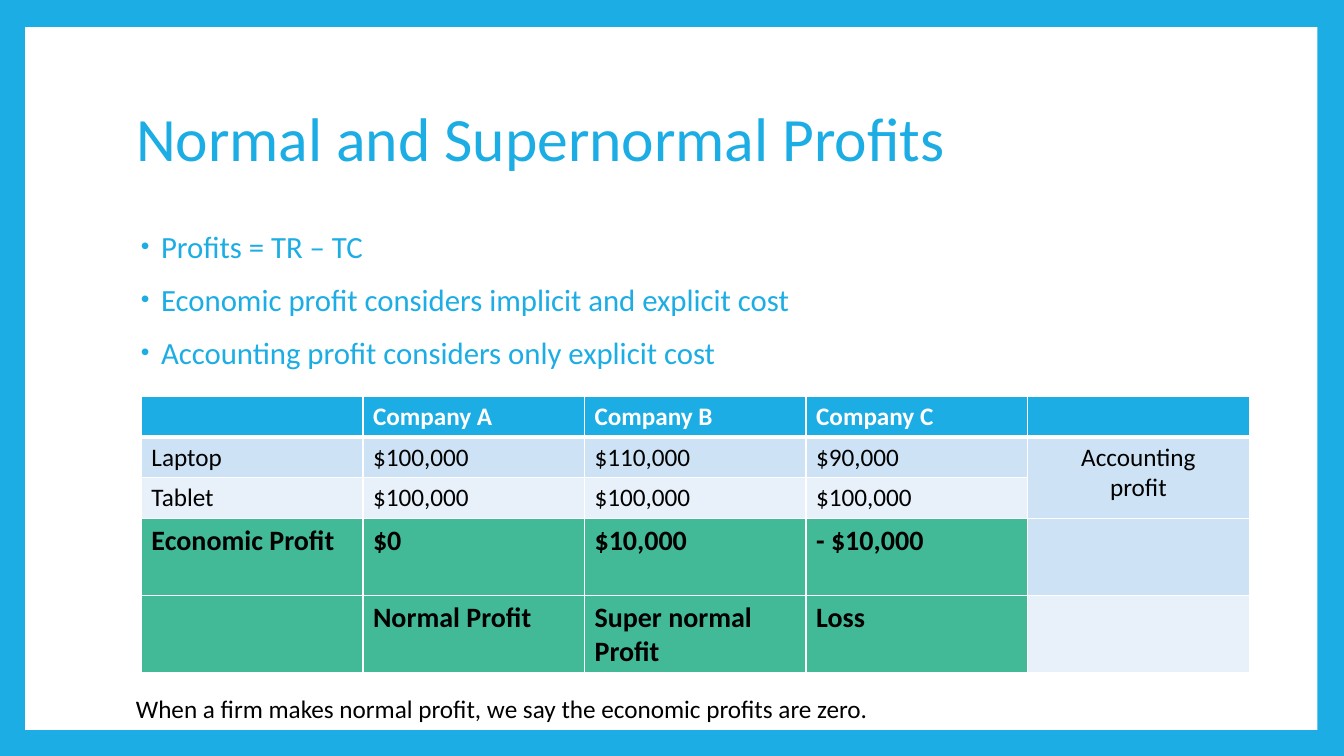
from dataclasses import dataclass

from lxml.etree import SubElement
from pptx import Presentation
from pptx.dml.color import RGBColor
from pptx.enum.shapes import MSO_SHAPE
from pptx.enum.text import MSO_ANCHOR, MSO_AUTO_SIZE, PP_ALIGN
from pptx.oxml.ns import qn
from pptx.util import Pt

FONT = "Calibri"
BLUE, GREEN, WHITE, BLACK = "1CADE4", "42BA97", "FFFFFF", "000000"
BAND_DARK, BAND_LIGHT = "CDE3F5", "E8F1FA"


@dataclass
class Row:
    height: float
    texts: list[str]
    fill: str
    last_fill: str
    size: float = 18
    color: str = BLACK
    bold: bool = False
    bottom_line: float = 1


BULLETS = [
    "Profits = TR – TC",
    "Economic profit considers implicit and explicit cost",
    "Accounting profit considers only explicit cost",
]
ROWS = [
    Row(29, ["", "Company A", "Company B", "Company C", ""], BLUE, BLUE,
        color=WHITE, bold=True, bottom_line=3),
    Row(29, ["Laptop", "$100,000", "$110,000", "$90,000", "Accounting\nprofit"],
        BAND_DARK, BAND_DARK),
    Row(29, ["Tablet", "$100,000", "$100,000", "$100,000", ""], BAND_LIGHT, BAND_LIGHT),
    Row(55, ["Economic Profit", "$0", "$10,000", "- $10,000", ""], GREEN, BAND_DARK,
        size=20, bold=True),
    Row(55, ["", "Normal Profit", "Super normal Profit", "Loss", ""], GREEN, BAND_LIGHT,
        size=20, bold=True),
]
COLUMN_WIDTH = 158.26


def rgb(color: str) -> RGBColor:
    return RGBColor.from_string(color)


def add_run(p, text: str, size: float, color: str, bold: bool = False) -> None:
    r = p.add_run()
    r.text = text
    r.font.name, r.font.size, r.font.bold = FONT, Pt(size), bold
    r.font.color.rgb = rgb(color)


def add_lines(tf, lines: list[str], size: float, color: str, bold: bool = False) -> None:
    for i, line in enumerate(lines):
        p = tf.paragraphs[0] if i == 0 else tf.add_paragraph()
        add_run(p, line, size, color, bold)


def add_text_box(s, left: float, top: float, width: float, height: float):
    tf = s.shapes.add_textbox(Pt(left), Pt(top), Pt(width), Pt(height)).text_frame
    tf.word_wrap = True
    return tf


def set_bullet(p, color: str) -> None:
    pPr = p._p.get_or_add_pPr()
    pPr.set("marL", str(Pt(18)))
    pPr.set("indent", str(-Pt(14.4)))
    SubElement(SubElement(pPr, qn("a:buClr")), qn("a:srgbClr"), val=color)
    SubElement(pPr, qn("a:buSzPct"), val="80000")
    SubElement(pPr, qn("a:buFont"), typeface="Arial")
    SubElement(pPr, qn("a:buChar"), char="•")


def set_borders(cell, top: float, bottom: float) -> None:
    tcPr = cell._tc.get_or_add_tcPr()
    for i, (side, width) in enumerate([("L", 1), ("R", 1), ("T", top), ("B", bottom)]):
        ln = SubElement(tcPr, qn(f"a:ln{side}"), w=str(Pt(width)))
        SubElement(SubElement(ln, qn("a:solidFill")), qn("a:srgbClr"), val=WHITE)
        tcPr.insert(i, ln)


def add_profit_table(s, left: float, top: float, rows: list[Row]) -> None:
    count = len(rows[0].texts)
    height = sum(row.height for row in rows)
    table = s.shapes.add_table(len(rows), count, Pt(left), Pt(top),
                               Pt(count * COLUMN_WIDTH), Pt(height)).table
    for column in table.columns:
        column.width = Pt(COLUMN_WIDTH)
    line_above = 1
    for i, row in enumerate(rows):
        table.rows[i].height = Pt(row.height)
        for j, text in enumerate(row.texts):
            cell = table.cell(i, j)
            cell.fill.solid()
            cell.fill.fore_color.rgb = rgb(row.last_fill if j == count - 1 else row.fill)
            set_borders(cell, line_above, row.bottom_line)
            if text:
                add_lines(cell.text_frame, text.split("\n"), row.size, row.color, row.bold)
        line_above = row.bottom_line
    # The accounting label spans both product rows
    label = table.cell(1, count - 1)
    label.merge(table.cell(2, count - 1))
    for p in label.text_frame.paragraphs:
        p.alignment = PP_ALIGN.CENTER


def main() -> None:
    prs = Presentation()
    prs.slide_width, prs.slide_height = Pt(960), Pt(540)
    s = prs.slides.add_slide(prs.slide_layouts[5])

    # Blue frame with a white panel behind the title
    s.background.fill.solid()
    s.background.fill.fore_color.rgb = rgb(BLUE)
    panel = s.shapes.add_shape(MSO_SHAPE.RECTANGLE, Pt(18), Pt(19.3), Pt(923), Pt(502))
    panel.shadow.inherit = False
    panel.fill.solid()
    panel.fill.fore_color.rgb = rgb(WHITE)
    panel.line.fill.background()
    s.shapes._spTree.insert(2, panel._element)

    # Title
    title = s.shapes.title
    title.left, title.top, title.width, title.height = Pt(90), Pt(48), Pt(778), Pt(106.5)
    tf = title.text_frame
    tf.auto_size, tf.vertical_anchor = MSO_AUTO_SIZE.NONE, MSO_ANCHOR.MIDDLE
    p = tf.paragraphs[0]
    p.alignment, p.line_spacing = PP_ALIGN.LEFT, 0.9
    add_run(p, "Normal and Supernormal Profits", 44, BLUE)

    # Definitions
    tf = add_text_box(s, 90, 162, 778, 318)
    add_lines(tf, BULLETS, 22, BLUE)
    for p in tf.paragraphs:
        p.line_spacing, p.space_before = 0.9, Pt(14)
        set_bullet(p, BLUE)

    # Comparison of companies
    add_profit_table(s, 101, 283.2, ROWS)

    # Conclusion
    tf = add_text_box(s, 90, 492, 654, 29)
    add_lines(tf, ["When a firm makes normal profit, we say the economic profits are zero."],
              18, BLACK)

    prs.save("out.pptx")


if __name__ == "__main__":
    main()
